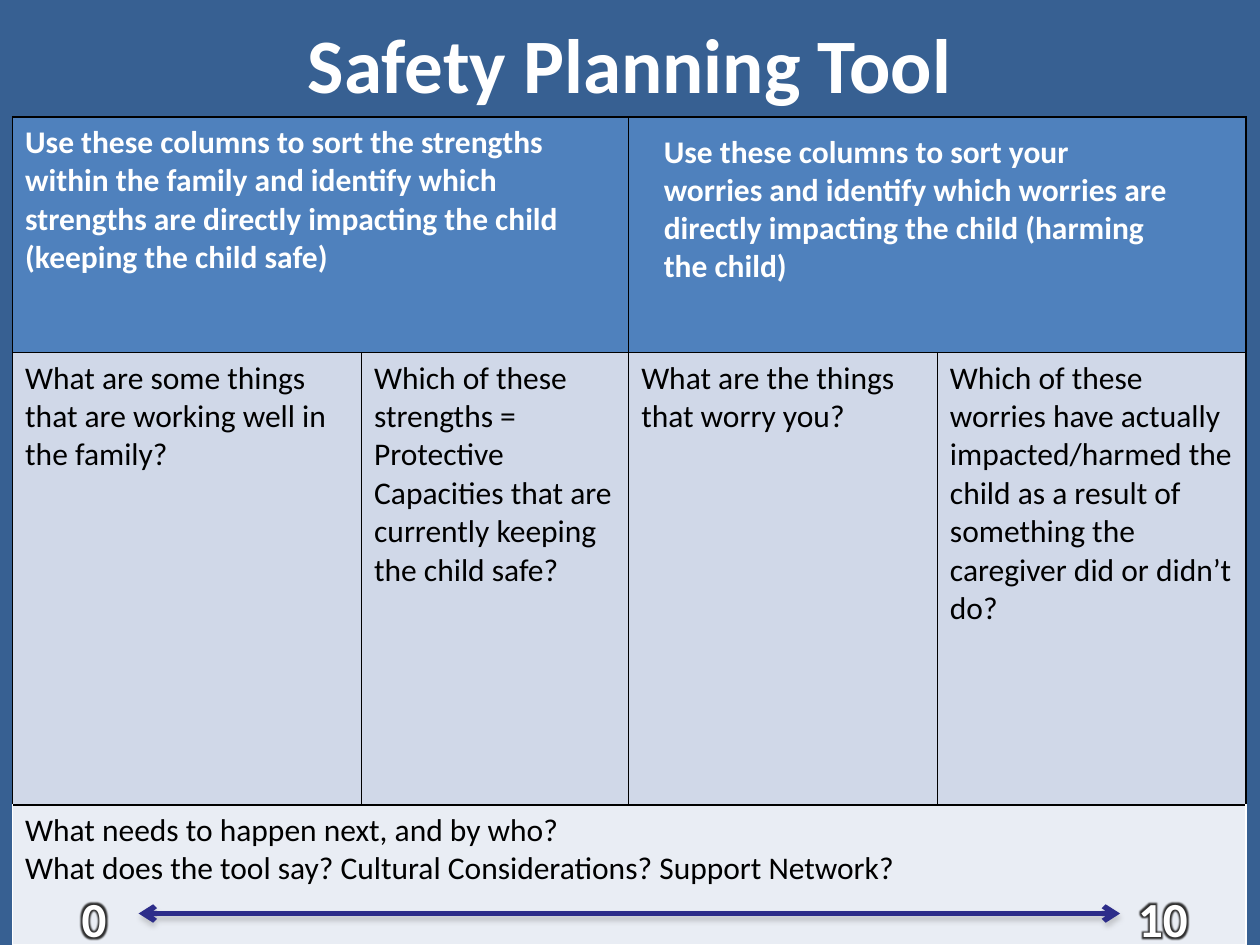
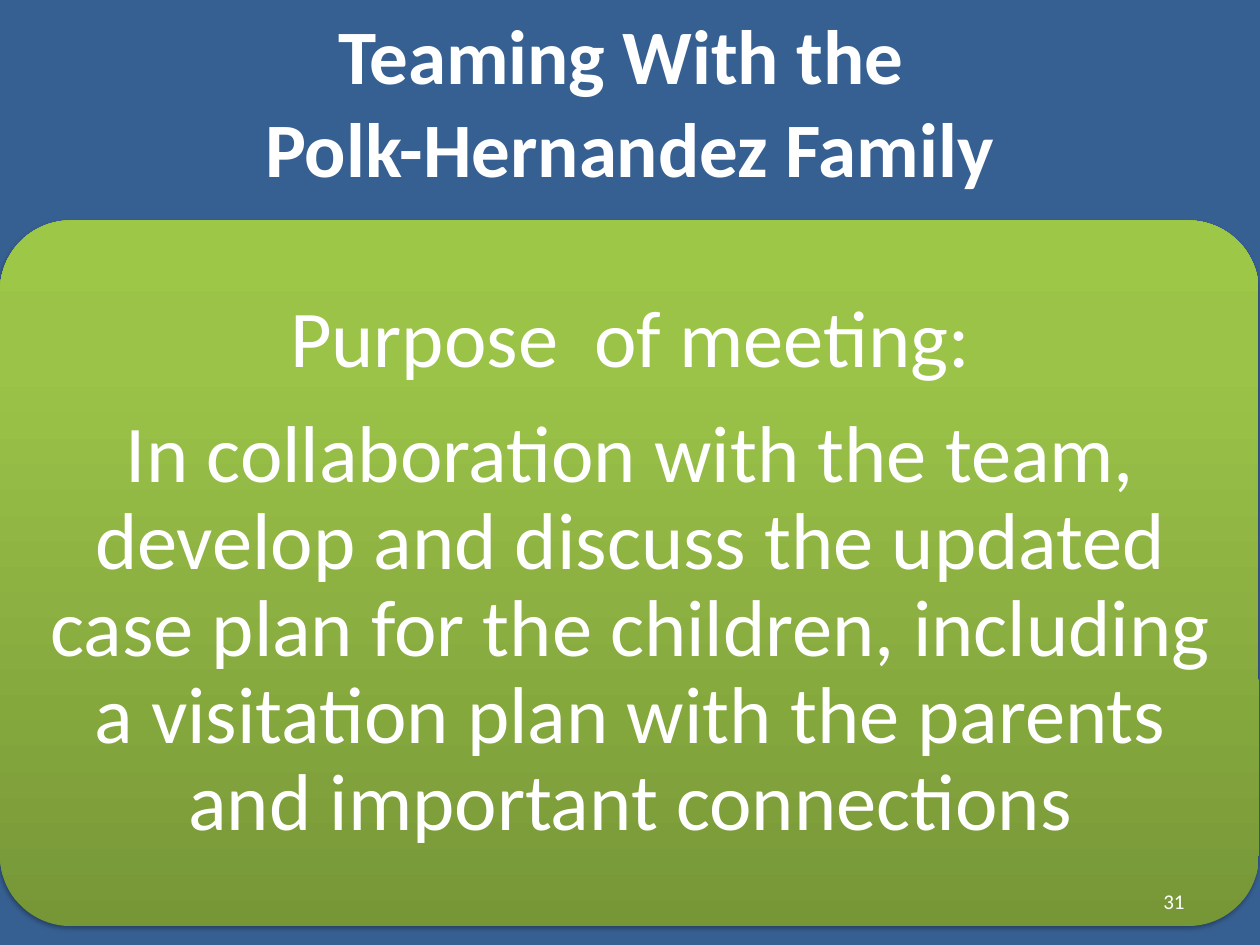
from lxml import etree
from pptx import Presentation
from pptx.dml.color import RGBColor
from pptx.enum.shapes import MSO_CONNECTOR, MSO_SHAPE
from pptx.enum.text import MSO_ANCHOR, PP_ALIGN
from pptx.oxml import parse_xml
from pptx.oxml.ns import nsdecls, qn
from pptx.util import Inches, Pt

STRAIGHT = MSO_CONNECTOR.STRAIGHT
ROUNDED = MSO_SHAPE.ROUNDED_RECTANGLE
TOP, MIDDLE = MSO_ANCHOR.TOP, MSO_ANCHOR.MIDDLE
LEFT, CENTER, RIGHT = PP_ALIGN.LEFT, PP_ALIGN.CENTER, PP_ALIGN.RIGHT

COLORS = {
    "background": "376092",
    "white": "FFFFFF",
    "black": "000000",
    "header": "4F81BD",
    "question": "D0D8E8",
    "next_steps": "E9EDF4",
    "scale": "2D2D8A",
    "scale_shadow": "808080",
    "halo": "303030",
    "green_dark": "779737",
    "green_mid": "9BC348",
    "green_light": "9DC746",
}
FONT = "Calibri"
TITLE = {"size": Pt(44), "bold": True}
HEADING = {"size": Pt(18), "bold": True}
BODY = {"size": Pt(18), "bold": False}
SCALE = {"size": Pt(28), "bold": True}
PURPOSE = {"size": Pt(46)}
PAGE_NUMBER = {"size": Pt(12)}
PURPOSE_SPACING = {"line_spacing": 0.9, "space_after": Pt(16)}


def rgb(name):
    return RGBColor.from_string(COLORS[name])


def apply(target, values):
    for attribute, value in values.items():
        setattr(target, attribute, value)


def write(frame, paragraphs, font, color="white", align=LEFT, spacing=None):
    """Fill a text frame with equally formatted paragraphs."""
    frame.text = "\n".join(paragraphs)
    for paragraph in frame.paragraphs:
        apply(paragraph, {"alignment": align, **(spacing or {})})
        for run in paragraph.runs:
            apply(run.font, {"name": FONT, **font})
            run.font.color.rgb = rgb(color)


def add_text(slide, box, paragraphs, font, align=LEFT, anchor=TOP,
             inset=None, spacing=None):
    frame = slide.shapes.add_textbox(*map(Inches, box)).text_frame
    apply(frame, {"word_wrap": True, "vertical_anchor": anchor})
    if inset:
        sides = ("left", "top", "right", "bottom")
        apply(frame, {f"margin_{side}": Inches(inset) for side in sides})
    write(frame, paragraphs, font, align=align, spacing=spacing)
    return frame


def add_title(slide, text, top, height):
    add_text(slide, (0.5, top, 9, height), [text], TITLE, CENTER, MIDDLE)


def add_slide(deck):
    slide = deck.slides.add_slide(deck.slide_layouts[6])
    slide.background.fill.solid()
    slide.background.fill.fore_color.rgb = rgb("background")
    return slide


def add_shadow(shape, color):
    """Soft shadow straight below the shape."""
    properties = shape._element.spPr
    for effects in properties.findall(qn("a:effectLst")):
        properties.remove(effects)
    properties.append(parse_xml(
        f'<a:effectLst {nsdecls("a")}><a:outerShdw blurRad="{Pt(3.1)}" '
        f'dist="{Pt(1.8)}" dir="5400000" rotWithShape="0">'
        f'<a:srgbClr val="{COLORS[color]}"><a:alpha val="35000"/></a:srgbClr>'
        '</a:outerShdw></a:effectLst>'))


def add_scale_end(slide, box, label):
    """Number at one end of the scale, with a dark halo."""
    frame = add_text(slide, box, [label], SCALE, CENTER)
    fill = frame.paragraphs[0].runs[0].font._element.find(qn("a:solidFill"))
    fill.addnext(parse_xml(
        f'<a:effectLst {nsdecls("a")}><a:glow rad="{Pt(5)}">'
        f'<a:srgbClr val="{COLORS["halo"]}"/></a:glow></a:effectLst>'))


def add_scale_arrow(slide, start, end, y):
    arrow = slide.shapes.add_connector(
        STRAIGHT, Inches(start), Inches(y), Inches(end), Inches(y))
    arrow.line.color.rgb = rgb("scale")
    arrow.line.width = Pt(3)
    for tip in ("a:headEnd", "a:tailEnd"):
        etree.SubElement(arrow.line._ln, qn(tip), type="arrow")
    add_shadow(arrow, "scale_shadow")


def set_borders(cell, sides):
    properties = cell._tc.get_or_add_tcPr()
    for position, side in enumerate("LRTB"):
        properties.insert(position, parse_xml(
            f'<a:ln{side} {nsdecls("a")} w="{Pt(1)}"><a:solidFill>'
            f'<a:srgbClr val="{COLORS[sides[side]]}"/></a:solidFill>'
            f'</a:ln{side}>'))


def add_planning_table(slide):
    widths, heights = (2.77, 2.12, 2.45, 2.45), (1.87, 3.59, 1.11)
    texts = {
        (0, 0): ["Use these columns to sort the strengths within the family "
                 "and identify which strengths are directly impacting the "
                 "child (keeping the child safe)"],
        (1, 0): ["What are some things that are working well in the family?"],
        (1, 1): ["Which of these strengths = Protective Capacities that are "
                 "currently keeping the child safe?"],
        (1, 2): ["What are the things that worry you?"],
        (1, 3): ["Which of these worries have actually impacted/harmed the "
                 "child as a result of something the caregiver did or "
                 "didn’t do?"],
        (2, 0): ["What needs to happen next, and by who?",
                 "What does the tool say? Cultural Considerations? "
                 "Support Network?"],
    }
    black = dict.fromkeys("LRTB", "black")
    white_below = {**dict.fromkeys("LRB", "white"), "T": "black"}
    # fill, font, text colour and borders of each row
    rows = (
        ("header", HEADING, "white", black),
        ("question", BODY, "black", black),
        ("next_steps", BODY, "black", white_below),
    )
    table = slide.shapes.add_table(
        len(heights), len(widths), Inches(0.1), Inches(0.93),
        Inches(sum(widths)), Inches(sum(heights))).table
    apply(table, {"first_row": False, "horz_banding": False})
    for column, width in zip(table.columns, widths):
        column.width = Inches(width)
    for row, height in zip(table.rows, heights):
        row.height = Inches(height)
    for row, first, last in ((0, 0, 1), (0, 2, 3), (2, 0, 3)):
        table.cell(row, first).merge(table.cell(row, last))
    for row, (fill, font, color, borders) in enumerate(rows):
        for column in range(len(widths)):
            cell = table.cell(row, column)
            cell.fill.solid()
            cell.fill.fore_color.rgb = rgb(fill)
            set_borders(cell, borders)
            if (row, column) in texts:
                write(cell.text_frame, texts[row, column], font, color)


def add_green_panel(slide, box):
    panel = slide.shapes.add_shape(ROUNDED, *map(Inches, box))
    panel.adjustments[0] = 0.1
    panel.line.fill.background()
    stops = ((0, "green_dark"), (80, "green_mid"), (100, "green_light"))
    stop_xml = "".join(
        f'<a:gs pos="{percent * 1000}"><a:srgbClr val="{COLORS[color]}"/></a:gs>'
        for percent, color in stops)
    panel._element.spPr.find(qn("a:prstGeom")).addnext(parse_xml(
        f'<a:gradFill {nsdecls("a")} rotWithShape="1"><a:gsLst>{stop_xml}'
        '</a:gsLst><a:lin ang="16200000" scaled="0"/></a:gradFill>'))
    add_shadow(panel, "black")


def build_planning_tool(deck):
    slide = add_slide(deck)
    add_title(slide, "Safety Planning Tool", 0, 1)
    add_planning_table(slide)
    # Worries heading lies over the empty header cell
    add_text(slide, (5.17, 1, 4.25, 1.31),
             ["Use these columns to sort your worries and identify which "
              "worries are directly impacting the child (harming the child)"],
             HEADING)
    # Scale from 0 to 10
    add_scale_end(slide, (0.39, 7, 0.71, 0.5), "0")
    add_scale_end(slide, (8.77, 7, 0.92, 0.5), "10")
    add_scale_arrow(slide, 1.1, 8.89, 7.25)


def build_family_meeting(deck):
    slide = add_slide(deck)
    add_title(slide, "Teaming With the \vPolk-Hernandez Family", 0.17, 1.25)
    add_green_panel(slide, (0, 1.75, 9.99, 5.6))
    add_text(slide, (0.17, 1.91, 9.66, 5.27),
             ["Purpose  of meeting:",
              "In collaboration with the team, develop and discuss the "
              "updated case plan for the children, including a visitation "
              "plan with the parents and important connections"],
             PURPOSE, CENTER, MIDDLE, 0.19, PURPOSE_SPACING)
    add_text(slide, (7.17, 6.95, 2.33, 0.4), ["31"], PAGE_NUMBER, RIGHT, MIDDLE)


def main():
    deck = Presentation()
    apply(deck, {"slide_width": Inches(10), "slide_height": Inches(7.5)})
    build_planning_tool(deck)
    build_family_meeting(deck)
    deck.save("out.pptx")


if __name__ == "__main__":
    main()
